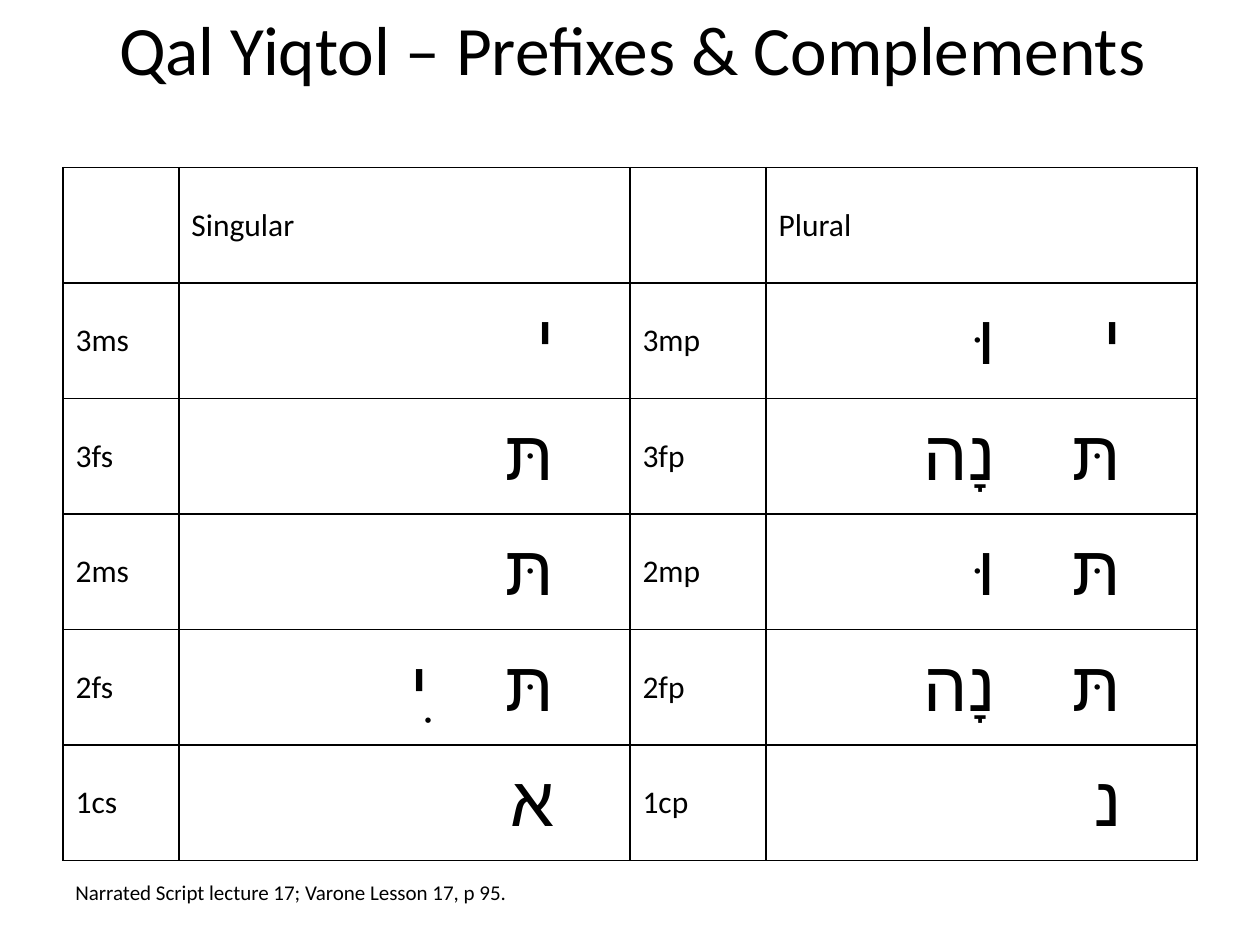
from pptx import Presentation
from pptx.dml.color import RGBColor
from pptx.enum.text import MSO_ANCHOR, PP_ALIGN
from pptx.oxml.ns import qn
from pptx.util import Inches, Pt
from lxml.etree import SubElement

WIDE, HIGH = 10, 7.5
INK = "000000"
COLS = (0.92, 3.58, 1.08, 3.42)
ROWS = (
    ("", "Singular", "", "Plural"),
    ("3ms", "\tי", "3mp", "\tי\tוּ"),
    ("3fs", "\tתּ", "3fp", "\tתּ\tנָה"),
    ("2ms", "\tתּ", "2mp", "\tתּ\tוּ"),
    ("2fs", "\tתּ\tִי", "2fp", "\tתּ\tנָה"),
    ("1cs", "\tא", "1cp", "\tנ"),
)


def color(code):
    return RGBColor.from_string(code)


def write(frame, text, size=18, font="Calibri", ink=INK, align=None):
    para = frame.paragraphs[0]
    para.alignment = align
    run = para.add_run()
    run.text = text
    run.font.size = Pt(size)
    run.font.color.rgb = color(ink)
    run.font.name = font
    SubElement(run._r.get_or_add_rPr(), qn("a:cs"), typeface=font)
    return para


def hebrew(frame, text):
    para = write(frame, text, size=40, font="Arial", align=PP_ALIGN.RIGHT)
    props = para._p.get_or_add_pPr()
    props.set("rtl", "1")
    stops = SubElement(props, qn("a:tabLst"))
    for i in range(text.count("\t")):
        SubElement(stops, qn("a:tab"), pos=str(Inches(0.5 + i)), algn="r")


def border(cell, ink=INK, width=1):
    props = cell._tc.get_or_add_tcPr()
    for side in ("lnL", "lnR", "lnT", "lnB"):
        line = SubElement(props, qn("a:" + side), w=str(Pt(width)))
        fill = SubElement(line, qn("a:solidFill"))
        SubElement(fill, qn("a:srgbClr"), val=ink)


def grid(slide, left, top, high):
    shape = slide.shapes.add_table(
        len(ROWS), len(COLS), Inches(left), Inches(top),
        Inches(sum(COLS)), Inches(high))
    table = shape.table
    table.first_row = table.horz_banding = False
    for col, width in zip(table.columns, COLS):
        col.width = Inches(width)
    for r, row in enumerate(ROWS):
        for c, text in enumerate(row):
            cell = table.cell(r, c)
            cell.vertical_anchor = MSO_ANCHOR.MIDDLE
            border(cell)
            cell.fill.background()
            if "\t" in text:
                hebrew(cell.text_frame, text)
            elif text:
                write(cell.text_frame, text)


def label(slide, text, left, top, wide, high, anchor=MSO_ANCHOR.TOP, **form):
    box = slide.shapes.add_textbox(*map(Inches, (left, top, wide, high)))
    frame = box.text_frame
    frame.word_wrap = True
    frame.vertical_anchor = anchor
    write(frame, text, **form)


def main():
    deck = Presentation()
    deck.slide_width, deck.slide_height = Inches(WIDE), Inches(HIGH)
    slide = deck.slides.add_slide(deck.slide_layouts[6])
    edge, span = 0.05 * WIDE, 0.9 * WIDE
    grid(slide, edge, 1.33, 5.5)
    label(slide, "Narrated Script lecture 17; Varone Lesson 17, p 95.",
          edge, 6.93, span, 0.04 * HIGH, size=12)
    label(slide, "Qal Yiqtol – Prefixes & Complements",
          0.52, 0, span, 0.1 * HIGH, anchor=MSO_ANCHOR.MIDDLE,
          size=39.6, align=PP_ALIGN.CENTER)
    deck.save("out.pptx")


if __name__ == "__main__":
    main()
